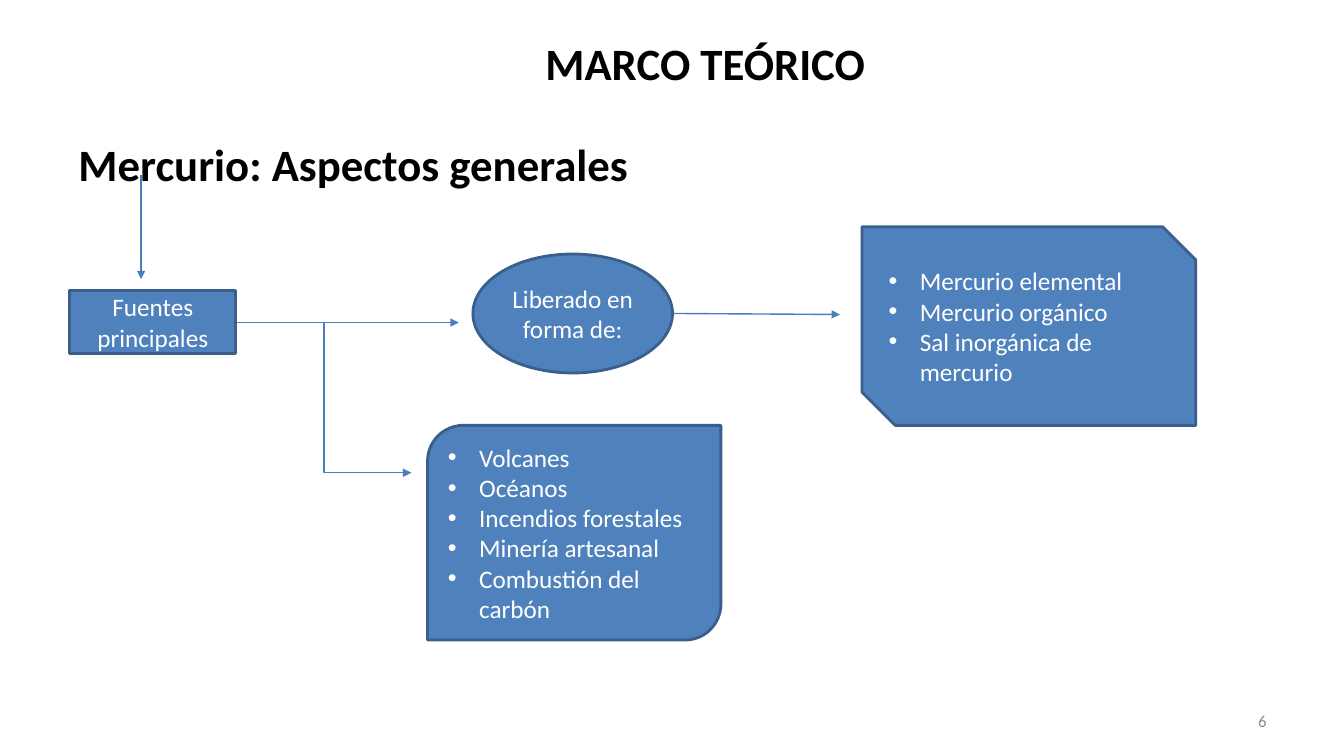
from lxml import etree
from pptx import Presentation
from pptx import util as u
from pptx.dml.color import RGBColor
from pptx.enum import shapes, text
from pptx.oxml import ns

COLORS = {
    "black": "000000",
    "white": "FFFFFF",
    "grey": "8C8C8C",
    "fill": "4F81BD",
    "outline": "3A5F8C",
    "arrow": "4B7EBC",
}
SHAPE = shapes.MSO_SHAPE
LINE = shapes.MSO_CONNECTOR
ALIGN = text.PP_ALIGN
ANCHOR = text.MSO_ANCHOR


def rgb(name):
    return RGBColor.from_string(COLORS[name])


def add_bullet(p):
    pPr = p._p.get_or_add_pPr()
    indent = u.Inches(0.31)
    pPr.set("marL", str(indent))
    pPr.set("indent", str(-indent))
    etree.SubElement(pPr, ns.qn("a:buFont"), typeface="Arial")
    etree.SubElement(pPr, ns.qn("a:buChar"), char="•")


def write(tf, lines, size=18, color="white", bold=False, align=ALIGN.CENTER,
          anchor=ANCHOR.MIDDLE, bullets=False, spacing=None):
    tf.word_wrap = True
    tf.vertical_anchor = anchor
    for i, line in enumerate(lines):
        p = tf.add_paragraph() if i else tf.paragraphs[0]
        p.alignment = align
        if spacing:
            p.line_spacing = spacing
        if bullets:
            add_bullet(p)
        r = p.add_run()
        r.text = line
        r.font.name = "Calibri"
        r.font.size = u.Pt(size)
        r.font.bold = bold
        r.font.color.rgb = rgb(color)


def add_text(s, box, line, **fmt):
    sp = s.shapes.add_textbox(*map(u.Inches, box))
    write(sp.text_frame, [line], **fmt)


def add_node(s, kind, box, lines, **fmt):
    sp = s.shapes.add_shape(kind, *map(u.Inches, box))
    sp.shadow.inherit = False
    sp.fill.solid()
    sp.fill.fore_color.rgb = rgb("fill")
    sp.line.color.rgb = rgb("outline")
    sp.line.width = u.Pt(2)
    write(sp.text_frame, lines, **fmt)


def add_arrow(s, start, end, kind=LINE.STRAIGHT):
    c = s.shapes.add_connector(kind, *map(u.Inches, start + end))
    c.line.color.rgb = rgb("arrow")
    c.line.width = u.Pt(1)
    etree.SubElement(c.line._get_or_add_ln(), ns.qn("a:tailEnd"), type="triangle")
    etree.SubElement(c._element.spPr, ns.qn("a:effectLst"))


def main():
    prs = Presentation()
    prs.slide_width = u.Inches(13.33)
    prs.slide_height = u.Inches(7.5)
    s = prs.slides.add_slide(prs.slide_layouts[6])

    add_text(s, (1.62, 0.13, 10.75, 1.04), "MARCO TEÓRICO",
             size=32, color="black", bold=True, spacing=0.9)
    add_text(s, (0.68, 1.31, 11.48, 5.27), "Mercurio: Aspectos generales",
             size=32, color="black", bold=True, align=ALIGN.LEFT, anchor=ANCHOR.TOP)

    add_arrow(s, (2.35, 3.2), (4.08, 4.69), LINE.ELBOW)
    add_arrow(s, (3.22, 3.2), (4.55, 3.2))
    add_arrow(s, (6.67, 3.11), (8.33, 3.12))
    add_arrow(s, (1.4, 1.74), (1.4, 2.77))

    add_node(s, SHAPE.RECTANGLE, (0.69, 2.88, 1.65, 0.63), ["Fuentes principales"])
    add_node(s, SHAPE.OVAL, (4.69, 2.52, 1.98, 1.18), ["Liberado en forma de:"])
    add_node(s, SHAPE.ROUND_2_DIAG_RECTANGLE, (4.24, 4.22, 2.91, 2.13),
             ["Volcanes", "Océanos", "Incendios forestales", "Minería artesanal",
              "Combustión del carbón"],
             align=ALIGN.LEFT, bullets=True)
    add_node(s, SHAPE.SNIP_2_DIAG_RECTANGLE, (8.55, 2.25, 3.31, 1.97),
             ["Mercurio elemental", "Mercurio orgánico", "Sal inorgánica de mercurio"],
             align=ALIGN.LEFT, bullets=True)

    add_text(s, (9.55, 6.95, 3.11, 0.4), "6", size=12, color="grey", align=ALIGN.RIGHT)
    prs.save("out.pptx")


if __name__ == "__main__":
    main()
